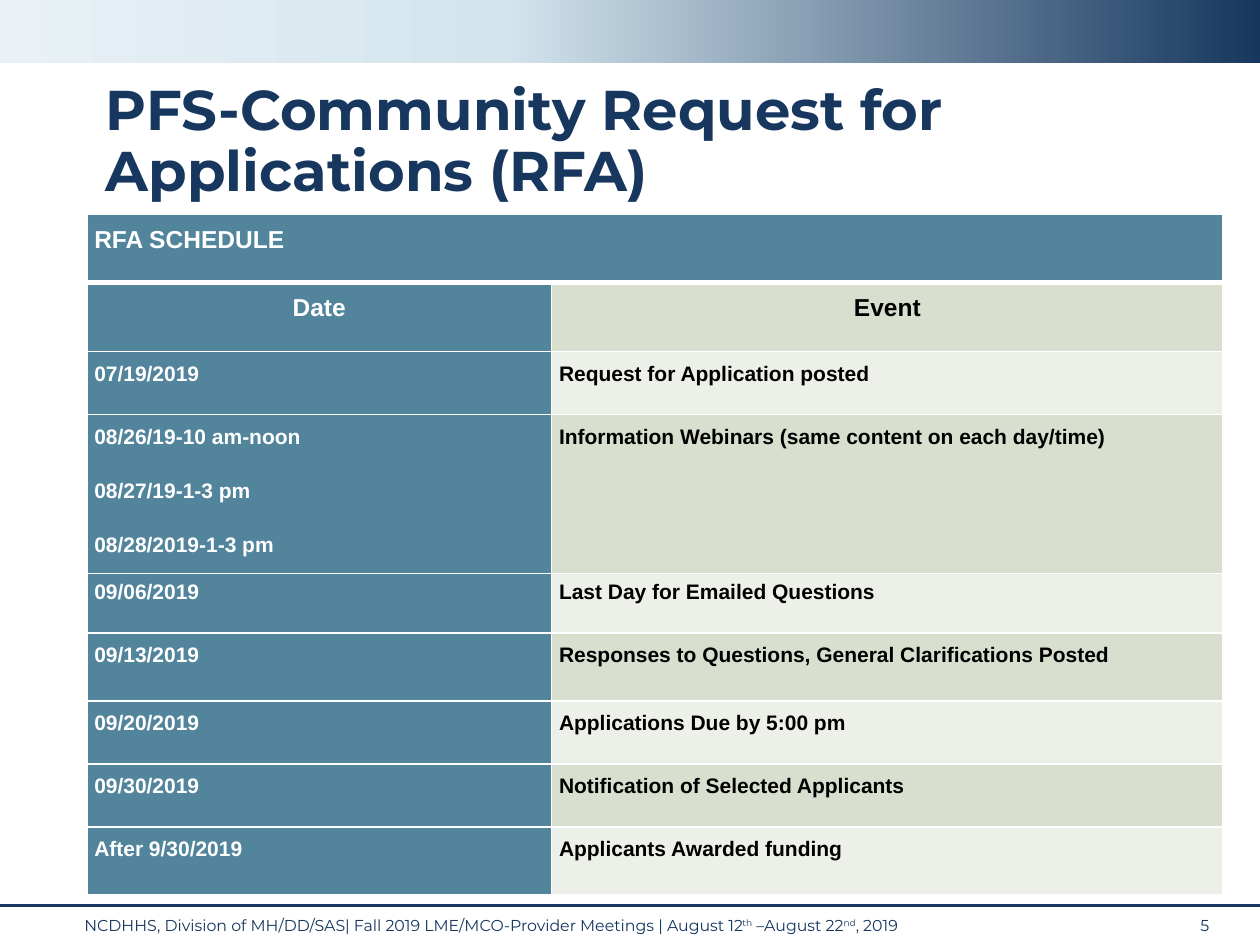
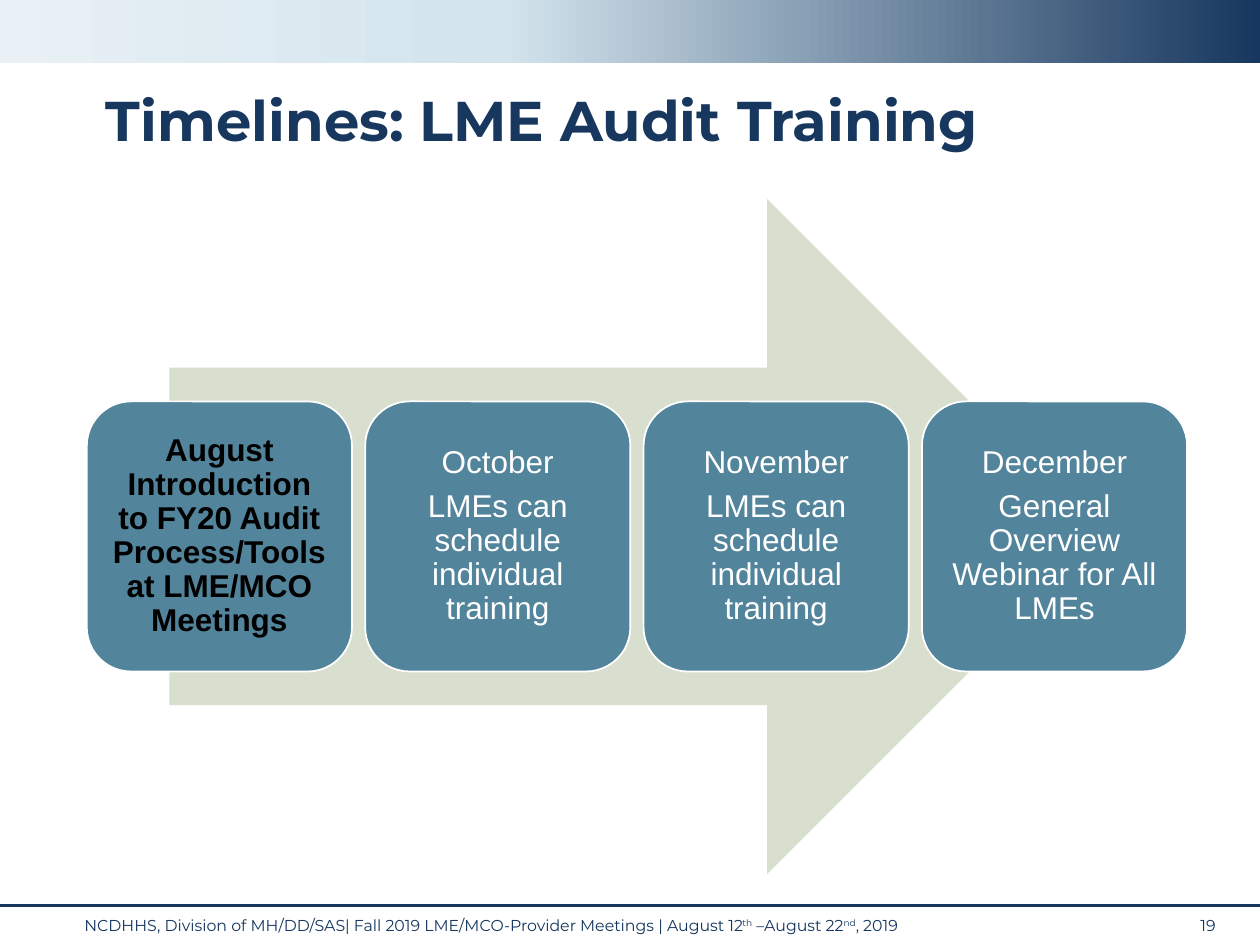
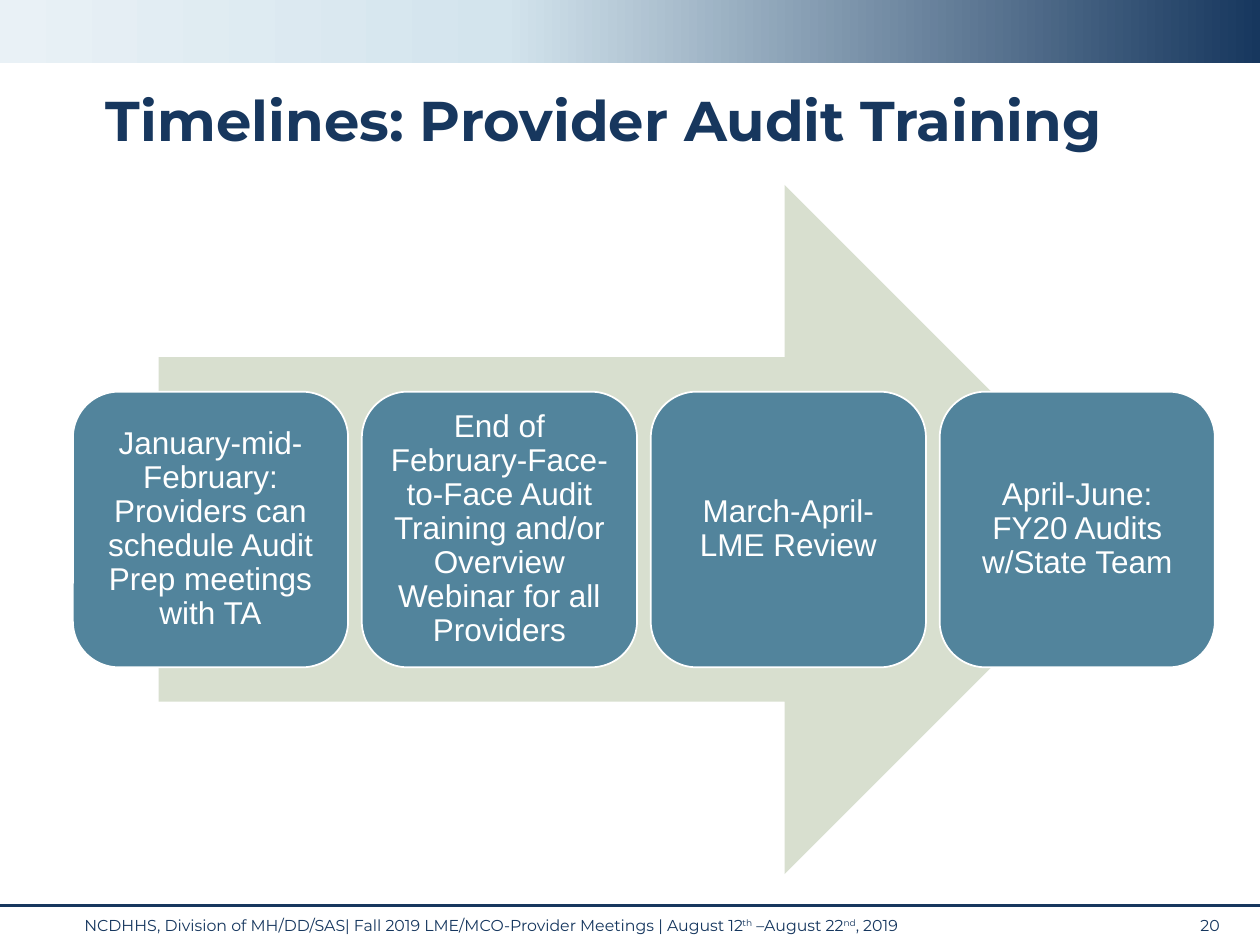
from copy import deepcopy

from lxml import etree
from pptx import Presentation
from pptx.dml.color import RGBColor
from pptx.enum import shapes, text
from pptx.oxml.ns import qn
from pptx.util import Cm, Pt

NAVY = RGBColor(0x17, 0x37, 0x5E)
FOOTER_NAVY = RGBColor(0x15, 0x36, 0x5E)
ICE = RGBColor(0xD3, 0xE4, 0xED)
FROST = RGBColor(0xE9, 0xF1, 0xF6)
TEAL = RGBColor(0x52, 0x84, 0x9C)
SAGE = RGBColor(0xD8, 0xDF, 0xCF)
PALE_SAGE = RGBColor(0xEC, 0xF0, 0xE8)
WHITE = RGBColor(0xFF, 0xFF, 0xFF)
BLACK = RGBColor(0, 0, 0)

TITLE = {"name": "Montserrat", "size": Pt(32), "bold": True}
FOOTER = {"name": "Montserrat", "size": Pt(9)}
STEP = {"name": "Arial", "size": Pt(18)}
BOLD_STEP = {**STEP, "bold": True}
HEADING = {"name": "Arial", "size": Pt(14), "bold": True}
ENTRY = {**HEADING, "size": Pt(12)}

BAND_STOPS = [(0, NAVY), (0.6, ICE), (1, FROST)]
FOOTER_PARTS = [
    ("NCDHHS, Division of MH/DD/SAS| Fall 2019 LME/MCO-Provider Meetings | August 12", False),
    ("th", True),
    (" –August 22", False),
    ("nd", True),
    (", 2019", False),
]

SCHEDULE = [
    (1.27, ["07/19/2019"], "Request for Application posted"),
    (3.2, ["08/26/19-10 am-noon", "08/27/19-1-3 pm", "08/28/2019-1-3 pm"],
     "Information Webinars (same content on each day/time)"),
    (1.2, ["09/06/2019"], "Last Day for Emailed Questions"),
    (1.37, ["09/13/2019"], "Responses to Questions, General Clarifications Posted"),
    (1.27, ["09/20/2019"], "Applications Due by 5:00 pm"),
    (1.27, ["09/30/2019"], "Notification of Selected Applicants"),
    (1.37, ["After 9/30/2019"], "Applicants Awarded funding"),
]
TIGHT_ROW = 4

LME_STEPS = [
    ["August Introduction to FY20 Audit Process/Tools at LME/MCO Meetings"],
    ["October", "LMEs can schedule individual training"],
    ["November", "LMEs can schedule individual training"],
    ["December", "General Overview Webinar for All LMEs"],
]
PROVIDER_STEPS = [
    ["January-mid-February: Providers can schedule Audit Prep meetings with TA"],
    ["End of February-Face-to-Face Audit Training and/or Overview Webinar for all Providers"],
    ["March-April- LME Review"],
    ["April-June: FY20 Audits w/State Team"],
]


def apply(target, values):
    for name, value in values.items():
        setattr(target, name, value)


class Deck:
    def __init__(self):
        self.deck = Presentation()
        apply(self.deck, {"slide_width": Cm(25.4), "slide_height": Cm(19.05)})
        self.page = None

    def add_page(self, title, number, top=1.73, height=1.52):
        self.page = self.deck.slides.add_slide(self.deck.slide_layouts[6])
        self.band()
        self.rule(18.26)
        self.label(1.45, 18.34, 22.2, 0.74, FOOTER_PARTS, FOOTER, FOOTER_NAVY)
        self.label(23.95, 18.34, 1.12, 0.76, [(number, False)], FOOTER, FOOTER_NAVY)
        heading = self.label(1.88, top, 21.79, height, [(title, False)], TITLE, NAVY)
        heading.vertical_anchor = text.MSO_ANCHOR.MIDDLE
        heading.paragraphs[0].line_spacing = 0.9

    def add_span(self, para, words, style, color):
        span = para.add_run()
        span.text = words
        apply(span.font, style)
        span.font.color.rgb = color
        return span

    def label(self, left, top, width, height, parts, style, color):
        box = self.page.shapes.add_textbox(Cm(left), Cm(top), Cm(width), Cm(height))
        frame = box.text_frame
        frame.word_wrap = True
        for words, raised in parts:
            span = self.add_span(frame.paragraphs[0], words, style, color)
            if raised:
                span.font._element.set("baseline", "30000")
        return frame

    def shape(self, kind, left, top, width, height, color=None, outline=None):
        form = self.page.shapes.add_shape(kind, Cm(left), Cm(top), Cm(width), Cm(height))
        form.shadow.inherit = False
        if color is not None:
            form.fill.solid()
            form.fill.fore_color.rgb = color
        if outline is None:
            form.line.fill.background()
        else:
            form.line.color.rgb = outline
            form.line.width = Pt(1)
        return form

    def band(self):
        band = self.shape(shapes.MSO_SHAPE.RECTANGLE, 0, 0, 25.4, 1.27)
        band.fill.gradient()
        band.fill.gradient_angle = 180
        stops = band._element.spPr.find(qn("a:gradFill")).find(qn("a:gsLst"))
        stops.append(deepcopy(stops[0]))
        for stop, (position, color) in zip(band.fill.gradient_stops, BAND_STOPS):
            stop.position = position
            stop.color.rgb = color

    def rule(self, top):
        rule = self.page.shapes.add_connector(
            shapes.MSO_CONNECTOR.STRAIGHT, 0, Cm(top), Cm(25.4), Cm(top))
        rule.line.color.rgb = NAVY
        rule.line.width = Pt(1.75)
        etree.SubElement(rule._element.spPr, qn("a:effectLst"))

    def process(self, left, top, width, height, steps, first_style=STEP, first_color=WHITE):
        self.shape(shapes.MSO_SHAPE.RIGHT_ARROW, left + 0.075 * width, top,
                   0.85 * width, height, SAGE)
        gap_share = 0.05
        step_width = width / (len(steps) + gap_share * (len(steps) - 1))
        for index, lines in enumerate(steps):
            box = self.shape(shapes.MSO_SHAPE.ROUNDED_RECTANGLE,
                             left + index * step_width * (1 + gap_share), top + 0.3 * height,
                             step_width, 0.4 * height, TEAL, WHITE)
            style, color = (STEP, WHITE) if index else (first_style, first_color)
            frame = box.text_frame
            inset = Cm(0.18)
            apply(frame, {"word_wrap": True, "vertical_anchor": text.MSO_ANCHOR.MIDDLE,
                          "margin_left": inset, "margin_right": inset,
                          "margin_top": inset, "margin_bottom": inset})
            for number, words in enumerate(lines):
                para = frame.add_paragraph() if number else frame.paragraphs[0]
                apply(para, {"alignment": text.PP_ALIGN.CENTER, "line_spacing": 0.9,
                             "space_after": Pt(6)})
                self.add_span(para, words, style, color)

    def cell(self, cell, lines, style, color, fill, top=1, bottom=1, **spacing):
        inset = Cm(0.15)
        apply(cell, {"margin_left": inset, "margin_right": inset,
                     "margin_top": inset, "margin_bottom": inset})
        properties = cell._tc.get_or_add_tcPr()
        for side, width in (("L", 1), ("R", 1), ("T", top), ("B", bottom)):
            border = etree.SubElement(properties, qn(f"a:ln{side}"), w=str(Pt(width)))
            paint = etree.SubElement(border, qn("a:solidFill"))
            etree.SubElement(paint, qn("a:srgbClr"), val=str(WHITE))
        cell.fill.solid()
        cell.fill.fore_color.rgb = fill
        for number, words in enumerate(lines):
            para = cell.text_frame.add_paragraph() if number else cell.text_frame.paragraphs[0]
            apply(para, {"line_spacing": 1.15, **spacing})
            if number:
                para.space_before = Pt(15.4)
            self.add_span(para, words, style, color)

    def schedule(self, left, top, columns, heading, labels, entries):
        heights = [1.37, 1.4] + [height for height, _, _ in entries]
        table = self.page.shapes.add_table(
            len(heights), len(columns), Cm(left), Cm(top),
            Cm(sum(columns)), Cm(sum(heights))).table
        apply(table, {"first_row": False, "horz_banding": False})
        for column, width in zip(table.columns, columns):
            column.width = Cm(width)
        for row, height in zip(table.rows, heights):
            row.height = Cm(height)
        table.cell(0, 0).merge(table.cell(0, 1))
        self.cell(table.cell(0, 0), [heading], HEADING, WHITE, TEAL, bottom=3,
                  space_after=Pt(10))
        self.cell(table.cell(0, 1), [], HEADING, WHITE, TEAL, bottom=3)
        for column, (words, color, fill) in enumerate(zip(labels, (WHITE, BLACK), (TEAL, SAGE))):
            self.cell(table.cell(1, column), [words], HEADING, color, fill, top=3,
                      alignment=text.PP_ALIGN.CENTER)
        for row, (_, dates, event) in enumerate(entries, 2):
            spacing = {"line_spacing": 1.0 if row == TIGHT_ROW else 1.15}
            self.cell(table.cell(row, 0), dates, ENTRY, WHITE, TEAL, **spacing)
            self.cell(table.cell(row, 1), [event], ENTRY, BLACK,
                      SAGE if row % 2 else PALE_SAGE, **spacing)


def main():
    show = Deck()
    show.add_page("PFS-Community Request for Applications (RFA)", "5", 1.6, 2.57)
    show.schedule(1.75, 4.32, [9.37, 13.54], "RFA SCHEDULE", ["Date", "Event"], SCHEDULE)
    show.add_page("Timelines: LME Audit Training", "19")
    show.process(1.75, 4.01, 22.18, 13.61, LME_STEPS, BOLD_STEP, BLACK)
    show.add_page("Timelines: Provider Audit Training", "20")
    show.process(1.47, 3.73, 23.02, 13.89, PROVIDER_STEPS)
    show.deck.save("out.pptx")


if __name__ == "__main__":
    main()
